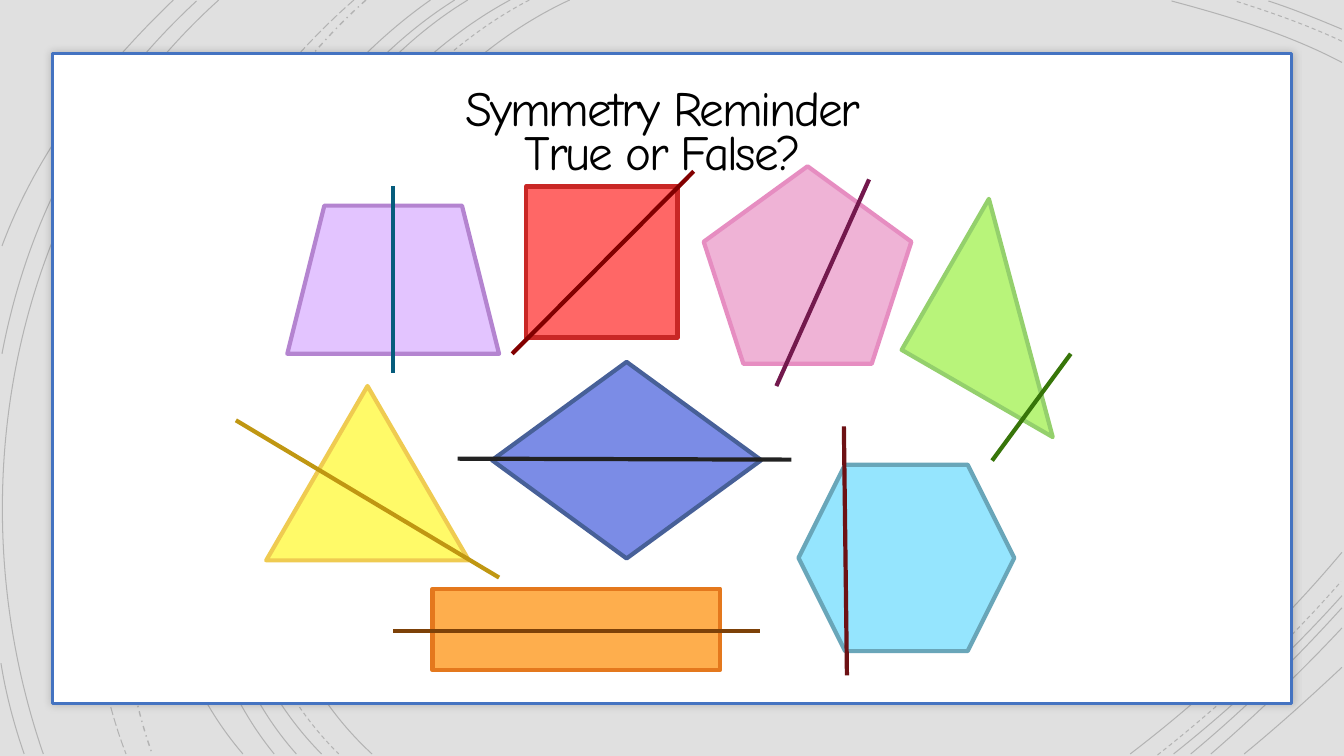
from lxml.etree import SubElement
from pptx import Presentation
from pptx.dml.color import RGBColor as Rgb
from pptx.enum.dml import MSO_LINE as Dash
from pptx.enum.shapes import MSO_CONNECTOR as Link, MSO_SHAPE as Form
from pptx.enum.text import MSO_ANCHOR as Anchor, PP_ALIGN as Align
from pptx.oxml.ns import qn
from pptx.util import Pt

PX = 9144
FONT = "Comic Neue"
GREY = Rgb(0xE0, 0xE0, 0xE0)
WHITE = Rgb(0xFF, 0xFF, 0xFF)
BLACK = Rgb(0x00, 0x00, 0x00)
BLUE = Rgb(0x44, 0x73, 0xC1)
YELLOW = Rgb(0xFF, 0xFA, 0x68), Rgb(0xEF, 0xCB, 0x51), Rgb(0xC0, 0x97, 0x12)
RED = Rgb(0xFF, 0x67, 0x66), Rgb(0xC9, 0x27, 0x25), Rgb(0x82, 0x00, 0x00)
GREEN = Rgb(0xB8, 0xF4, 0x7A), Rgb(0x94, 0xD0, 0x6C), Rgb(0x37, 0x75, 0x09)
ORANGE = Rgb(0xFE, 0xAE, 0x4D), Rgb(0xE4, 0x78, 0x1D), Rgb(0x7D, 0x41, 0x08)
LILAC = Rgb(0xE3, 0xC4, 0xFF), Rgb(0xB4, 0x84, 0xD0), Rgb(0x06, 0x5C, 0x7C)
AQUA = Rgb(0x95, 0xE5, 0xFE), Rgb(0x69, 0xA6, 0xB9), Rgb(0x6D, 0x11, 0x14)
INDIGO = Rgb(0x7B, 0x8C, 0xE6), Rgb(0x47, 0x60, 0x98), Rgb(0x22, 0x22, 0x22)
PINK = Rgb(0xEF, 0xB3, 0xD6), Rgb(0xE6, 0x8D, 0xC1), Rgb(0x73, 0x19, 0x4D)

ARCS = [
    (Dash.SOLID, (565, 0), (315, 115), (143, 540), (369, 748)),
    (Dash.SOLID, (1331, 62), (1278, 34), (1218, 16), (1162, 1)),
    (Dash.SOLID, (1121, 748), (1197, 690), (1269, 622), (1331, 548)),
    (Dash.DASH, (525, 0), (285, 125), (123, 537), (336, 748)),
    (Dash.DASH, (1331, 41), (1297, 25), (1260, 12), (1225, 1)),
    (Dash.DASH, (1148, 749), (1213, 698), (1275, 640), (1330, 577)),
    (Dash.SOLID, (506, 0), (270, 127), (110, 537), (319, 748)),
    (Dash.SOLID, (1331, 29), (1307, 19), (1283, 9), (1258, 1)),
    (Dash.SOLID, (1164, 748), (1223, 701), (1280, 648), (1331, 591)),
    (Dash.SOLID, (464, 0), (244, 133), (110, 541), (294, 748)),
    (Dash.SOLID, (1181, 748), (1234, 704), (1284, 655), (1331, 603)),
    (Dash.SOLID, (451, 0), (231, 138), (97, 533), (272, 748)),
    (Dash.SOLID, (1201, 748), (1246, 709), (1290, 667), (1331, 623)),
    (Dash.SOLID, (427, 0), (217, 147), (53, 529), (241, 748)),
    (Dash.SOLID, (1234, 748), (1267, 721), (1299, 692), (1331, 662)),
    (Dash.DASH_DOT, (363, 0), (176, 166), (65, 509), (151, 748)),
    (Dash.LONG_DASH, (351, 0), (157, 169), (29, 499), (125, 748)),
    (Dash.SOLID, (217, 0), (11, 185), (-46, 490), (43, 748)),
    (Dash.SOLID, (195, 1), (92, 96), (28, 214), (2, 351)),
    (Dash.SOLID, (1, 658), (6, 689), (14, 719), (24, 748)),
    (Dash.SOLID, (172, 0), (100, 69), (37, 150), (2, 244)),
]

FORMS = [
    (Form.ISOSCELES_TRIANGLE, (30, 218, 201, 173), 0, YELLOW, (0, 252, 261, 408)),
    (Form.RECTANGLE, (288, 20, 150, 150), 0, RED, (274, 186, 454, 5)),
    (Form.RIGHT_TRIANGLE, (692, 64, 173, 173), 30, GREEN, (750, 292, 828, 186)),
    (Form.RECTANGLE, (195, 419, 285, 81), 0, ORANGE, (156, 461, 520, 461)),
    (Form.TRAPEZOID, (51, 39, 210, 147), 0, LILAC, (156, 20, 156, 205)),
    (Form.HEXAGON, (558, 296, 214, 185), 0, AQUA, (606, 505, 603, 258)),
    (Form.DIAMOND, (254, 194, 267, 195), 0, INDIGO, (220, 290, 551, 291)),
    (Form.REGULAR_PENTAGON, (464, 0, 206, 196), 0, PINK, (536, 218, 628, 13)),
]


def stroke(line, tone, width):
    line.color.rgb = tone
    line.width = Pt(width)


def add_form(shapes, form, box):
    shape = shapes.add_shape(form, *[n * PX for n in box])
    shape.shadow.inherit = False
    return shape


def paint(shape, tone, edge, width):
    shape.fill.solid()
    shape.fill.fore_color.rgb = tone
    stroke(shape.line, edge, width)


def bend(arc):
    track = next(arc.element.iter(qn("a:path")))
    curve = SubElement(track, qn("a:cubicBezTo"))
    for step in track.findall(qn("a:lnTo")):
        curve.append(step[0])
        track.remove(step)


def add_arcs(shapes, left, top):
    group = shapes.add_group_shape()
    for dash, *spots in ARCS:
        first, *rest = [((left + x) * PX, (top + y) * PX) for x, y in spots]
        pen = group.shapes.build_freeform(*first)
        pen.add_line_segments(rest, close=False)
        arc = pen.convert_to_shape()
        bend(arc)
        arc.shadow.inherit = False
        arc.fill.background()
        stroke(arc.line, BLACK, 1 if dash == Dash.DASH_DOT else 0.75)
        arc.line.dash_style = dash
        tint = next(arc.line._ln.iter(qn("a:srgbClr")))
        SubElement(tint, qn("a:alpha"), val="20000")


def add_board(shapes, box):
    board = add_form(shapes, Form.RECTANGLE, box)
    paint(board, WHITE, BLUE, 1.75)
    glow = board.element.spPr.find(qn("a:effectLst"))
    shade = SubElement(glow, qn("a:outerShdw"), blurRad=str(Pt(6)),
                       dist="0", dir="0", algn="ctr", rotWithShape="0")
    tint = SubElement(shade, qn("a:srgbClr"), val=str(BLACK))
    SubElement(tint, qn("a:alpha"), val="20000")


def add_forms(shapes, left, top):
    group = shapes.add_group_shape().shapes
    for form, (x, y, wide, high), turn, (tone, edge, _), _ in FORMS:
        shape = add_form(group, form, (left + x, top + y, wide, high))
        shape.rotation = turn
        paint(shape, tone, edge, 3)
    for *_, (_, _, tone), (x1, y1, x2, y2) in FORMS:
        ends = left + x1, top + y1, left + x2, top + y2
        cut = group.add_connector(Link.STRAIGHT, *[n * PX for n in ends])
        stroke(cut.line, tone, 3)
        SubElement(cut.element.spPr, qn("a:effectLst"))


def add_title(shapes, box):
    title = add_form(shapes, Form.ROUNDED_RECTANGLE, box)
    title.adjustments[0] = 0.1
    title.fill.background()
    title.line.fill.background()
    frame = title.text_frame
    frame.word_wrap = True
    frame.vertical_anchor = Anchor.MIDDLE
    for n, text in enumerate(("Symmetry Reminder", "True or False?")):
        para = frame.add_paragraph() if n else frame.paragraphs[0]
        para.alignment = Align.CENTER
        para.line_spacing = 0.75
        run = para.add_run()
        run.text = text
        run.font.name = FONT
        run.font.size = Pt(35.1)
        run.font.color.rgb = BLACK
        run.font._element.set("spc", "-150")


def main():
    deck = Presentation()
    deck.slide_width = 1333 * PX
    deck.slide_height = 750 * PX
    slide = deck.slides.add_slide(deck.slide_layouts[6])
    slide.background.fill.solid()
    slide.background.fill.fore_color.rgb = GREY
    add_arcs(slide.shapes, 0, 0)
    add_board(slide.shapes, (52, 53, 1229, 645))
    add_forms(slide.shapes, 234, 165)
    add_title(slide.shapes, (208, 77, 899, 114))
    deck.save("out.pptx")


if __name__ == "__main__":
    main()
